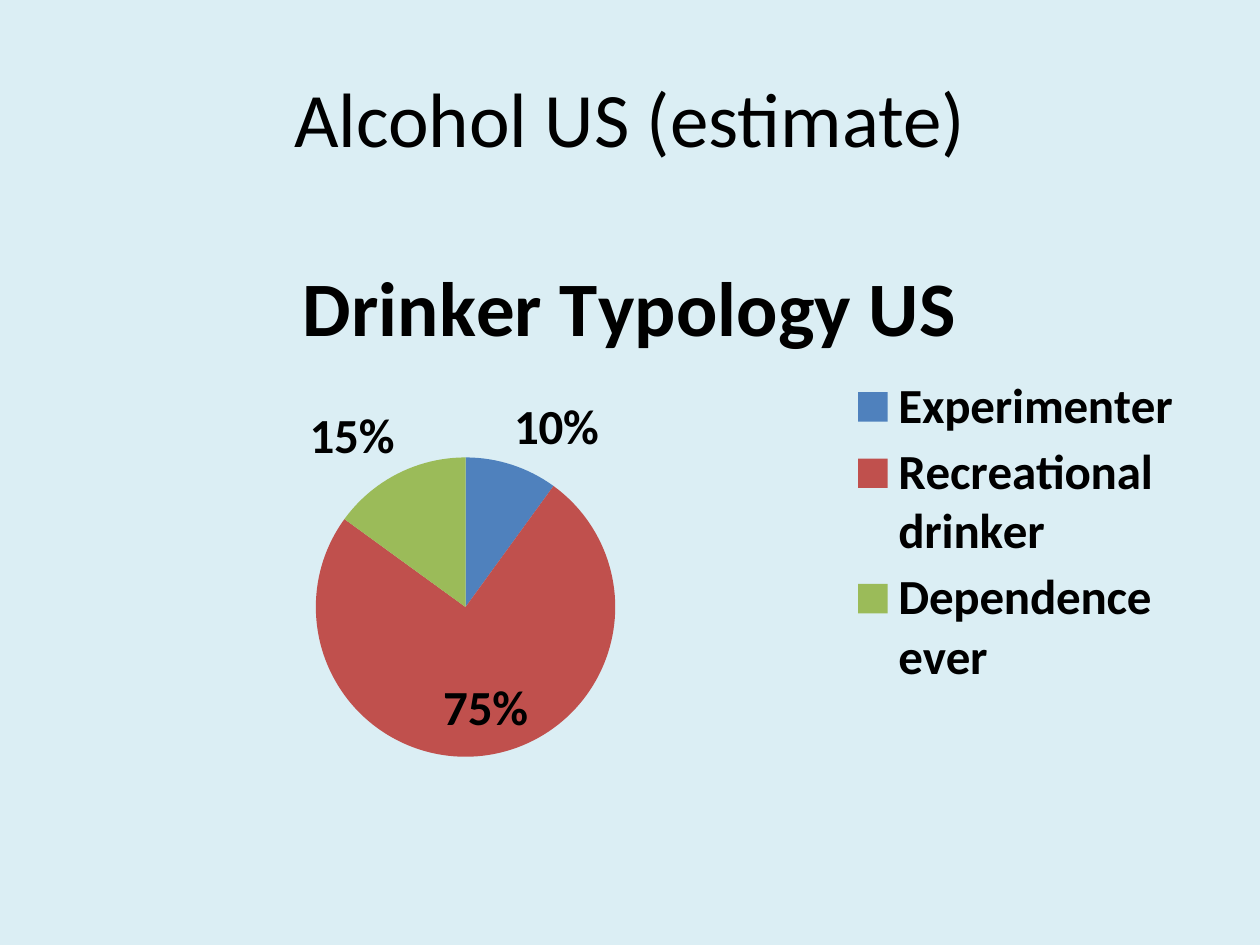
from lxml import etree
from pptx import Presentation
from pptx.chart.data import CategoryChartData
from pptx.dml.color import RGBColor
from pptx.enum.chart import XL_CHART_TYPE, XL_LABEL_POSITION, XL_LEGEND_POSITION
from pptx.enum.text import MSO_ANCHOR, PP_ALIGN
from pptx.oxml.ns import qn
from pptx.util import Inches, Pt

PIE = XL_CHART_TYPE.PIE
BEST_FIT = XL_LABEL_POSITION.BEST_FIT
LEGEND_RIGHT = XL_LEGEND_POSITION.RIGHT
MIDDLE = MSO_ANCHOR.MIDDLE
CENTER = PP_ALIGN.CENTER
TITLE_ONLY = 5

DRINKER_SHARES = {
    "Experimenter": (0.10, "4F81BD"),
    "Recreational drinker": (0.75, "C0504D"),
    "Dependence ever": (0.15, "9BBB59"),
}


def color(hex_string):
    return RGBColor.from_string(hex_string)


def set_manual_layout(element, index, **fractions):
    """Place a chart part by fractions of the chart's width and height."""
    for old_layout in element.findall(qn("c:layout")):
        element.remove(old_layout)
    layout = etree.Element(qn("c:layout"))
    manual = etree.SubElement(layout, qn("c:manualLayout"))
    if element.tag == qn("c:plotArea"):
        etree.SubElement(manual, qn("c:layoutTarget")).set("val", "inner")
    for mode in ("xMode", "yMode"):
        etree.SubElement(manual, qn(f"c:{mode}")).set("val", "edge")
    for name, value in fractions.items():
        etree.SubElement(manual, qn(f"c:{name}")).set("val", str(value))
    element.insert(index, layout)


class SlideBuilder:
    font_name = "Calibri"
    text_color = "000000"
    background = "DBEEF4"
    title_size = 44
    chart_size = 28

    def __init__(self, presentation):
        layout = presentation.slide_layouts[TITLE_ONLY]
        self.slide = presentation.slides.add_slide(layout)
        fill = self.slide.background.fill
        fill.solid()
        fill.fore_color.rgb = color(self.background)

    def format_font(self, font, size, bold):
        values = {"name": self.font_name, "size": Pt(size), "bold": bold}
        for name, value in values.items():
            setattr(font, name, value)
        font.color.rgb = color(self.text_color)

    def title(self, text, left, top, width, height):
        shape = self.slide.shapes.title
        box = {"left": left, "top": top, "width": width, "height": height}
        for name, value in box.items():
            setattr(shape, name, Inches(value))
        frame = shape.text_frame
        frame.text = text
        frame.vertical_anchor = MIDDLE
        paragraph = frame.paragraphs[0]
        paragraph.alignment = CENTER
        self.format_font(paragraph.runs[0].font, self.title_size, False)

    def pie_chart(self, title, shares, left, top, width, height):
        data = CategoryChartData(number_format="0%")
        data.categories = list(shares)
        data.add_series("Series 1", [value for value, _ in shares.values()])
        box = [Inches(length) for length in (left, top, width, height)]
        chart = self.slide.shapes.add_chart(PIE, *box, data).chart
        self.format_font(chart.font, self.chart_size, True)

        chart.has_title = True
        frame = chart.chart_title.text_frame
        frame.text = title
        self.format_font(frame.paragraphs[0].runs[0].font, self.title_size, True)

        chart.has_legend = True
        chart.legend.position = LEGEND_RIGHT
        chart.legend.include_in_layout = False
        self.format_font(chart.legend.font, self.chart_size, True)

        plot = chart.plots[0]
        plot.vary_by_categories = True
        for index, (_, fill_color) in enumerate(shares.values()):
            fill = plot.series[0].points[index].format.fill
            fill.solid()
            fill.fore_color.rgb = color(fill_color)

        plot.has_data_labels = True
        labels = plot.data_labels
        label_format = {
            "show_value": True,
            "show_percentage": False,
            "number_format": "0%",
            "number_format_is_linked": False,
            "position": BEST_FIT,
        }
        for name, value in label_format.items():
            setattr(labels, name, value)
        self.format_font(labels.font, self.chart_size, True)
        return chart


def main():
    presentation = Presentation()
    presentation.slide_width = Inches(10)
    presentation.slide_height = Inches(7.5)

    builder = SlideBuilder(presentation)
    builder.title("Alcohol US (estimate)", 0.5, 0.3, 9, 1.25)
    chart = builder.pie_chart(
        "Drinker Typology US", DRINKER_SHARES, 0.5, 1.75, 9, 4.95
    )
    plot_area = chart.element.find(f".//{qn('c:plotArea')}")
    set_manual_layout(plot_area, 0, x=0.22, y=0.38, w=0.27, h=0.48)
    legend = chart.element.find(f".//{qn('c:legend')}")
    set_manual_layout(legend, 1, x=0.69, y=0.24, w=0.3, h=0.52)

    presentation.save("out.pptx")


if __name__ == "__main__":
    main()
